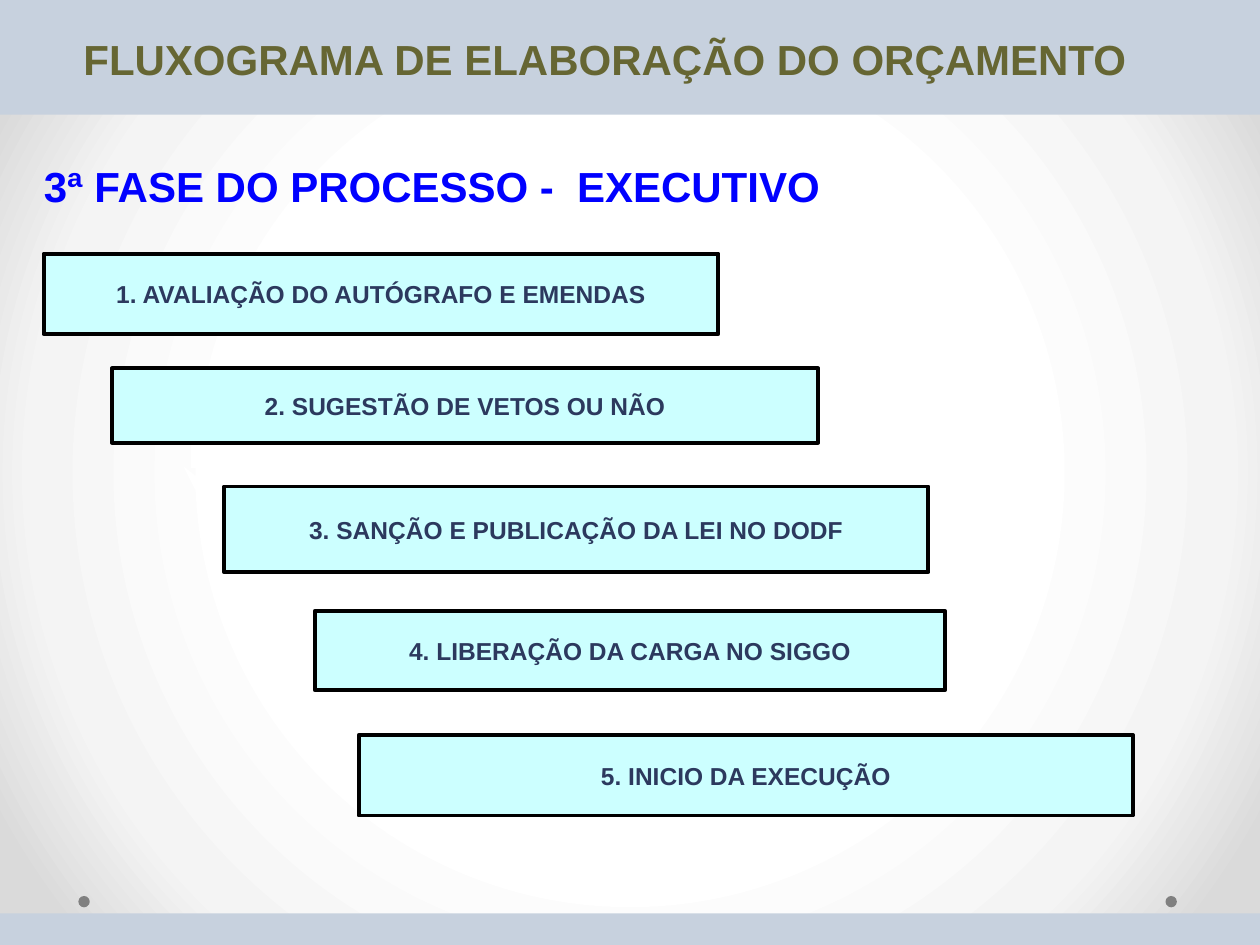
from lxml import etree
from pptx import Presentation
from pptx.dml.color import RGBColor
from pptx.enum.shapes import MSO_CONNECTOR, MSO_SHAPE
from pptx.enum.text import MSO_ANCHOR, PP_ALIGN
from pptx.oxml import parse_xml
from pptx.oxml.ns import nsdecls, qn
from pptx.util import Pt

BAND = RGBColor(0xC7, 0xD1, 0xDE)
DOT = RGBColor(0x80, 0x80, 0x80)
OLIVE = RGBColor(0x66, 0x66, 0x33)
BLUE = RGBColor(0x00, 0x00, 0xFF)
CYAN = RGBColor(0xCC, 0xFF, 0xFF)
NAVY = RGBColor(0x2C, 0x39, 0x5E)
BLACK = RGBColor(0x00, 0x00, 0x00)
WHITE = RGBColor(0xFF, 0xFF, 0xFF)


def add_filled(kind, left, top, width, height, color):
    shape = page.shapes.add_shape(kind, Pt(left), Pt(top), Pt(width), Pt(height))
    shape.shadow.inherit = False
    shape.fill.solid()
    shape.fill.fore_color.rgb = color
    shape.line.fill.background()
    return shape


def write(shape, text, size, color, align):
    """Set one bold Arial paragraph in the shape."""
    shape.text_frame.text = text
    para = shape.text_frame.paragraphs[0]
    para.alignment = align
    font = para.runs[0].font
    font.name, font.size, font.bold = "Arial", Pt(size), True
    font.color.rgb = color


deck = Presentation()
deck.slide_width, deck.slide_height = Pt(720), Pt(540)
page = deck.slides.add_slide(deck.slide_layouts[5])

# Radial background
fill = page.background.fill
fill.gradient()
stops = "".join(
    f'<a:gs pos="{percent * 1000}"><a:srgbClr val="{color}"/></a:gs>'
    for percent, color in ((50, "FFFFFF"), (76, "F4F4F4"), (92, "DADADA"))
)
radial = parse_xml(
    f'<a:gradFill {nsdecls("a")} rotWithShape="1"><a:gsLst>{stops}</a:gsLst>'
    '<a:path path="circle"><a:fillToRect l="50000" t="50000" r="50000" b="50000"/>'
    "</a:path></a:gradFill>"
)
old_gradient = next(page.element.iter(qn("a:gradFill")))
old_gradient.getparent().replace(old_gradient, radial)

# Dots and bands
for left in (666, 44.8):
    add_filled(MSO_SHAPE.OVAL, left, 512, 6.5, 6.5, DOT)
header = add_filled(MSO_SHAPE.RECTANGLE, 0, 0, 720, 65.5, BAND)
add_filled(MSO_SHAPE.RECTANGLE, 0, 522, 720, 20, BAND)

# Title, placed in front of the header band
title = page.shapes.title
title.left, title.top, title.width, title.height = Pt(-11), Pt(15), Pt(720), Pt(36.5)
write(title, "FLUXOGRAMA DE ELABORAÇÃO DO ORÇAMENTO ", 24, OLIVE, PP_ALIGN.CENTER)
title.text_frame.vertical_anchor = MSO_ANCHOR.MIDDLE
header.element.addnext(title.element)

# White arrow below the second step
arrow = page.shapes.add_connector(
    MSO_CONNECTOR.STRAIGHT, Pt(111.6), Pt(252.7), Pt(111.6), Pt(280)
)
arrow.line.color.rgb = WHITE
arrow.line.width = Pt(4.5)
etree.SubElement(arrow.line._get_or_add_ln(), qn("a:tailEnd"), type="stealth")
etree.SubElement(arrow.element.spPr, qn("a:effectLst"))

phase = page.shapes.add_textbox(Pt(18), Pt(88), Pt(649), Pt(36.5))
phase.text_frame.word_wrap = True
write(phase, "3ª FASE DO PROCESSO -  EXECUTIVO", 24, BLUE, PP_ALIGN.LEFT)

# Staircase of steps: left, top, width, height, text
steps = (
    (25, 145, 385.5, 46, "AVALIAÇÃO DO AUTÓGRAFO E EMENDAS"),
    (64, 210.5, 403.5, 42.5, "SUGESTÃO DE VETOS OU NÃO"),
    (128, 278, 402.5, 49, "SANÇÃO E PUBLICAÇÃO DA LEI NO DODF"),
    (180, 349, 360, 45.5, "LIBERAÇÃO DA CARGA NO SIGGO"),
    (205, 420, 442.5, 46, "INICIO DA EXECUÇÃO"),
)
for number, (left, top, width, height, label) in enumerate(steps, 1):
    box = add_filled(MSO_SHAPE.RECTANGLE, left, top, width, height, CYAN)
    box.line.color.rgb = BLACK
    box.line.width = Pt(2.25)
    box.text_frame.word_wrap = False
    box.text_frame.vertical_anchor = MSO_ANCHOR.MIDDLE
    write(box, f"{number}. {label}", 14, NAVY, PP_ALIGN.CENTER)

deck.save("out.pptx")
